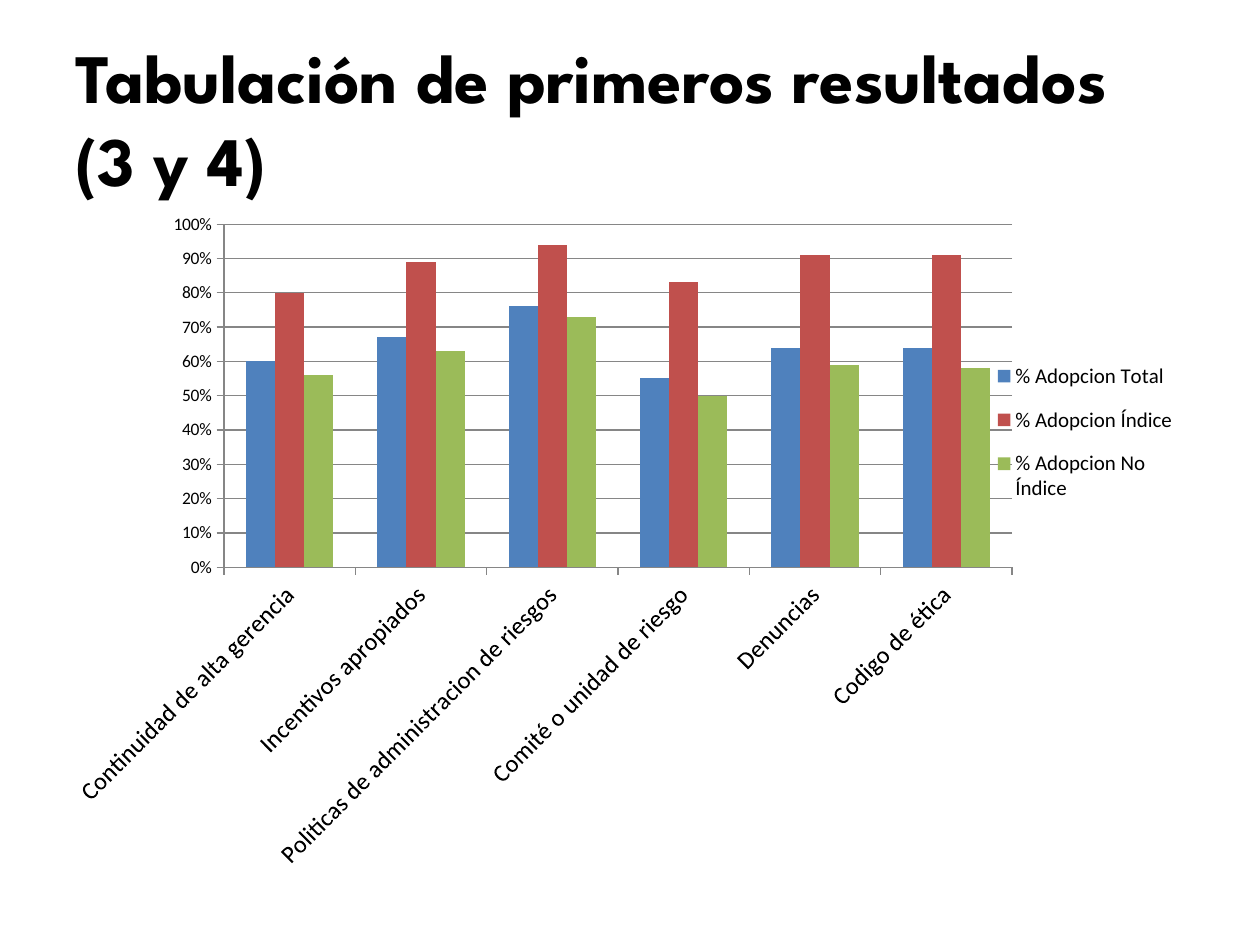
from pptx import Presentation, util as u
from pptx.chart import data as chart_data
from pptx.dml.color import RGBColor
from pptx.enum import chart as ch, text
from pptx.oxml import parse_xml
from pptx.oxml.ns import nsdecls

PX = u.Inches(1) // 126
COLORS = {"text": "000000", "line": "868686",
          "total": "4F81BD", "index": "C0504D", "no_index": "9BBB59"}
TITLE = "Tabulación de primeros resultados (3 y 4)"
PRACTICES = ["Continuidad de alta gerencia", "Incentivos apropiados",
             "Politicas de administracion de riesgos",
             "Comité o unidad de riesgo", "Denuncias", "Codigo de ética"]
ADOPTION = [
    ("% Adopcion Total", "total", (0.6, 0.67, 0.76, 0.55, 0.64, 0.64)),
    ("% Adopcion Índice", "index", (0.8, 0.89, 0.94, 0.83, 0.91, 0.91)),
    ("% Adopcion No Índice", "no_index", (0.56, 0.63, 0.73, 0.5, 0.59, 0.58)),
]
TITLE_BOX = (63, 38, 1134, 158)
CHART_BOX = (74, 204, 1111, 674)
PLOT_BOX = (222, 224, 790, 343)
LEGEND_BOX = (1005, 345, 180, 175)


def rgb(name):
    return RGBColor.from_string(COLORS[name])


def emu(box):
    return [v * PX for v in box]


def set_font(font, size, face="Calibri"):
    font.size, font.name = u.Pt(size), face
    font.color.rgb = rgb("text")


def chart_layout(box, target=""):
    """Manual layout of a chart part, as fractions of the chart."""
    left, top, width, height = CHART_BOX
    x, y, w, h = box
    parts = {"x": (x - left) / width, "y": (y - top) / height,
             "w": w / width, "h": h / height}
    modes = '<c:xMode val="edge"/><c:yMode val="edge"/>'
    sizes = "".join(f'<c:{k} val="{v:.3f}"/>' for k, v in parts.items())
    return parse_xml(f'<c:layout {nsdecls("c")}><c:manualLayout>{target}{modes}'
                     f'{sizes}</c:manualLayout></c:layout>')


def style_axis(axis, size):
    set_font(axis.tick_labels.font, size)
    axis.major_tick_mark = ch.XL_TICK_MARK.OUTSIDE
    axis.minor_tick_mark = ch.XL_TICK_MARK.NONE
    axis.format.line.color.rgb = rgb("line")
    axis.format.line.width = u.Pt(0.75)


def add_title(slide):
    title = slide.shapes.add_textbox(*emu(TITLE_BOX)).text_frame
    title.word_wrap = True
    title.vertical_anchor = text.MSO_ANCHOR.MIDDLE
    run = title.paragraphs[0].add_run()
    run.text = TITLE
    set_font(run.font, 39.6, "League Spartan")
    run.font.bold = True


def add_adoption_chart(slide):
    figures = chart_data.CategoryChartData(number_format="0%")
    figures.categories = PRACTICES
    for name, _, values in ADOPTION:
        figures.add_series(name, values)
    chart = slide.shapes.add_chart(ch.XL_CHART_TYPE.COLUMN_CLUSTERED,
                                   *emu(CHART_BOX), figures).chart
    chart.has_title = False
    set_font(chart.font, 10)

    plot = chart.plots[0]
    plot.gap_width, plot.overlap, plot.vary_by_categories = 150, 0, False
    for series, (_, color, _) in zip(plot.series, ADOPTION):
        series.format.fill.solid()
        series.format.fill.fore_color.rgb = rgb(color)

    practices, share = chart.category_axis, chart.value_axis
    style_axis(practices, 14)
    practices._element.txPr.bodyPr.set("rot", "-2700000")
    style_axis(share, 10)
    share.minimum_scale, share.maximum_scale, share.major_unit = 0, 1, 0.1
    share.tick_labels.number_format = "0%"
    share.tick_labels.number_format_is_linked = False
    share.has_major_gridlines = True
    share.major_gridlines.format.line.color.rgb = rgb("line")
    share.major_gridlines.format.line.width = u.Pt(0.75)

    chart.has_legend = True
    legend = chart.legend
    legend.position = ch.XL_LEGEND_POSITION.RIGHT
    legend.include_in_layout = False
    set_font(legend.font, 12)
    legend._element.find("{*}legendPos").addnext(chart_layout(LEGEND_BOX))

    plot_area = plot._element.getparent()
    for old in plot_area.findall("{*}layout"):
        plot_area.remove(old)
    plot_area.insert(0, chart_layout(PLOT_BOX, '<c:layoutTarget val="inner"/>'))


def main():
    deck = Presentation()
    deck.slide_width, deck.slide_height = u.Inches(10), u.Inches(7.5)
    slide = deck.slides.add_slide(deck.slide_layouts[6])
    add_title(slide)
    add_adoption_chart(slide)
    deck.save("out.pptx")


if __name__ == "__main__":
    main()
